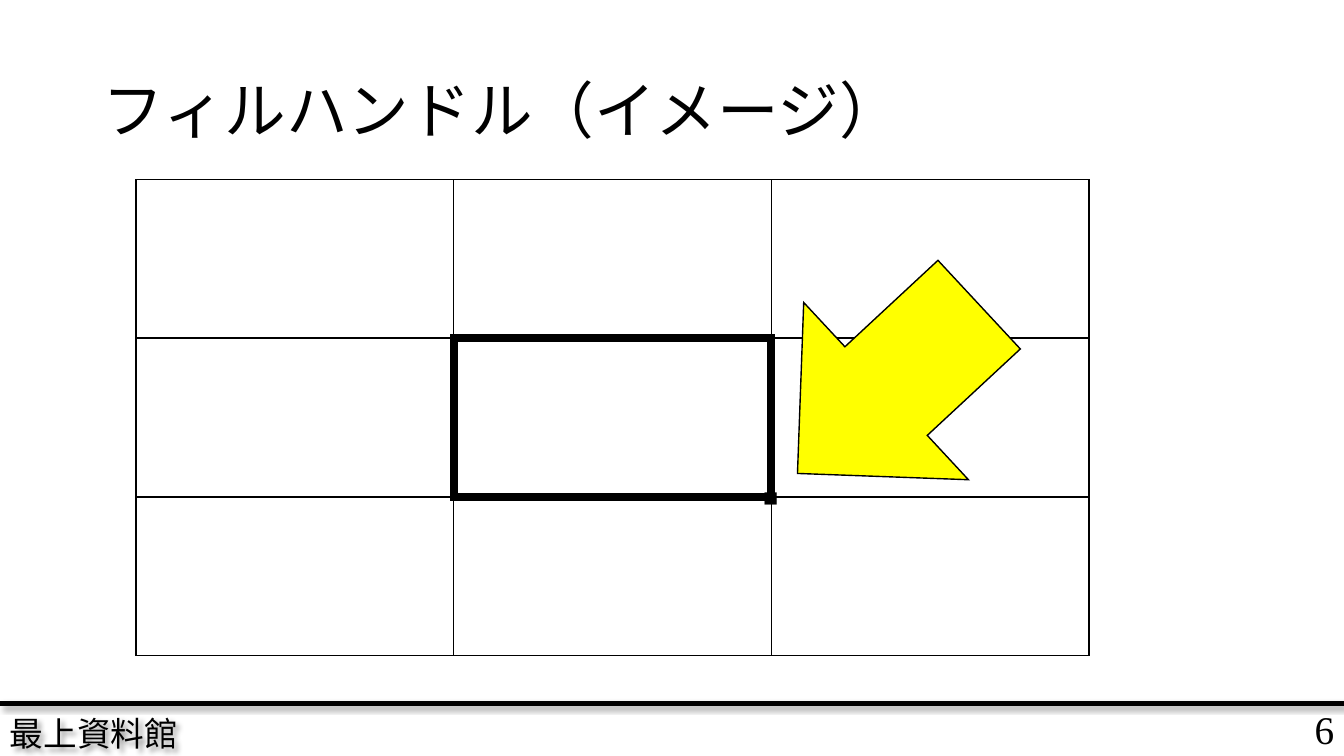
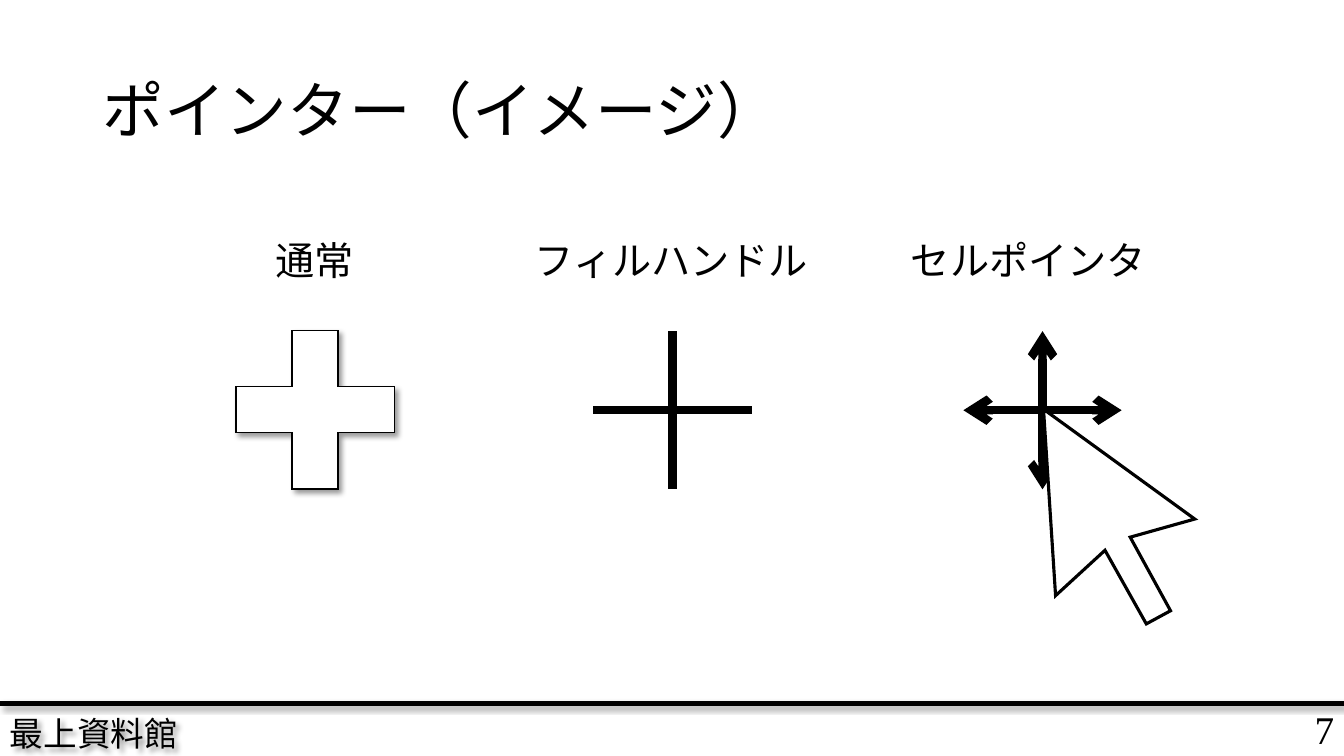
from dataclasses import dataclass

import lxml.etree
import pptx
import pptx.dml.color
import pptx.enum.shapes
import pptx.enum.text
import pptx.oxml.ns
import pptx.util

Inches = pptx.util.Inches
Pt = pptx.util.Pt
qn = pptx.oxml.ns.qn
SHAPE = pptx.enum.shapes.MSO_SHAPE
ALIGN = pptx.enum.text.PP_ALIGN
MIDDLE = pptx.enum.text.MSO_ANCHOR.MIDDLE

BLACK = pptx.dml.color.RGBColor(0x00, 0x00, 0x00)
WHITE = pptx.dml.color.RGBColor(0xFF, 0xFF, 0xFF)
YELLOW = pptx.dml.color.RGBColor(0xFF, 0xFF, 0x00)
SANS = "Noto Sans CJK JP"
SERIF = "Times New Roman"

SLIDE_W, SLIDE_H = 13.33, 7.5
FOOTER_Y = 6.98
GRID_X, GRID_Y = 1.35, 1.78
CELL_W, CELL_H = 3.15, 1.575
LABEL_X, LABEL_Y = 1.35, 2.18
LABEL_W, LABEL_H = 3.54, 0.79
CROSS_Y, CROSS_SIZE = 4.07, 1.57
CURSOR_POINTS = [
    (10.47, 5.91), (10.35, 4.06), (11.85, 5.15), (11.21, 5.33),
    (11.61, 6.06), (11.37, 6.19), (10.96, 5.46),
]


@dataclass(frozen=True)
class Box:
    x: float
    y: float
    w: float
    h: float

    def lengths(self) -> tuple:
        return Inches(self.x), Inches(self.y), Inches(self.w), Inches(self.h)


@dataclass(frozen=True)
class TextStyle:
    size: float
    font: str
    align: int = ALIGN.LEFT
    spacing: float = 1.0


TITLE = TextStyle(44, SANS, spacing=0.9)
LABEL = TextStyle(28, SANS, ALIGN.CENTER)
FOOTER = TextStyle(24, SERIF)
NUMBER = TextStyle(28, SERIF, ALIGN.RIGHT)
HANDLE = TextStyle(18, SERIF, ALIGN.CENTER)


def write(sp, text: str, style: TextStyle) -> None:
    tf = sp.text_frame
    tf.word_wrap = True
    tf.vertical_anchor = MIDDLE
    p = tf.paragraphs[0]
    p.text = text
    p.alignment = style.align
    p.line_spacing = style.spacing
    p.font.size = Pt(style.size)
    p.font.name = style.font
    p.font.color.rgb = BLACK
    props = p._p.pPr.find(qn("a:defRPr"))
    lxml.etree.SubElement(props, qn("a:ea"), typeface=SANS)


def add_text(s, box: Box, text: str, style: TextStyle):
    sp = s.shapes.add_textbox(*box.lengths())
    write(sp, text, style)
    return sp


def set_line(sp, color, width: float) -> None:
    sp.line.color.rgb = color
    sp.line.width = Pt(width)
    ln = sp._element.spPr.find(qn("a:ln"))
    lxml.etree.SubElement(ln, qn("a:miter"), lim="800000")


def paint(sp, fill, line=BLACK, width: float = 1) -> None:
    sp.shadow.inherit = False
    sp.fill.solid()
    sp.fill.fore_color.rgb = fill
    set_line(sp, line, width)


def add_shadow(sp) -> None:
    sp_pr = sp._element.spPr
    effects = sp_pr.find(qn("a:effectLst"))
    if effects is None:
        effects = lxml.etree.SubElement(sp_pr, qn("a:effectLst"))
    shadow = lxml.etree.SubElement(
        effects, qn("a:outerShdw"), blurRad=str(Pt(4)), dist=str(Pt(3)),
        dir="2700000", algn="tl", rotWithShape="0")
    color = lxml.etree.SubElement(shadow, qn("a:srgbClr"), val=str(BLACK))
    lxml.etree.SubElement(color, qn("a:alpha"), val="40000")


def add_shape(s, kind, box: Box, fill, line=BLACK, width: float = 1):
    sp = s.shapes.add_shape(kind, *box.lengths())
    paint(sp, fill, line, width)
    return sp


def add_line(s, x1: float, y1: float, x2: float, y2: float,
             width: float, arrows: bool = False):
    sp = s.shapes.add_connector(
        pptx.enum.shapes.MSO_CONNECTOR.STRAIGHT,
        Inches(x1), Inches(y1), Inches(x2), Inches(y2))
    set_line(sp, BLACK, width)
    if arrows:
        ln = sp._element.spPr.find(qn("a:ln"))
        for end in ("a:headEnd", "a:tailEnd"):
            lxml.etree.SubElement(ln, qn(end), type="arrow")
    lxml.etree.SubElement(sp._element.spPr, qn("a:effectLst"))
    return sp


def add_cross(s, center_x: float, arrows: bool = False) -> None:
    half = CROSS_SIZE / 2
    add_line(s, center_x, CROSS_Y - half, center_x, CROSS_Y + half, 6, arrows)
    add_line(s, center_x + half, CROSS_Y, center_x - half, CROSS_Y, 6, arrows)


def new_slide(prs, title: str, number: int):
    s = prs.slides.add_slide(prs.slide_layouts[6])
    s.background.fill.solid()
    s.background.fill.fore_color.rgb = WHITE
    add_text(s, Box(11.55, FOOTER_Y, 1.78, 0.51), str(number), NUMBER)
    add_shadow(add_text(s, Box(0, 7.05, 3.6, 0.45), "最上資料館", FOOTER))
    add_shadow(add_line(s, 0, FOOTER_Y, SLIDE_W, FOOTER_Y, 3))
    add_text(s, Box(0.92, 0.4, 11.5, 1.45), title, TITLE)
    return s


def cell_box(row: int, col: int) -> Box:
    return Box(GRID_X + col * CELL_W, GRID_Y + row * CELL_H, CELL_W, CELL_H)


def build_fill_handle(prs) -> None:
    s = new_slide(prs, "フィルハンドル（イメージ）", 6)
    for row in range(3):
        for col in range(3):
            if (row, col) != (1, 1):
                add_shape(s, SHAPE.RECTANGLE, cell_box(row, col), WHITE)
    add_shape(s, SHAPE.RECTANGLE, cell_box(1, 1), WHITE, width=6)
    add_text(s, Box(6.86, 4.14, 1.57, 1.57), "■", HANDLE)
    arrow = add_shape(s, SHAPE.RIGHT_ARROW, Box(7.58, 2.66, 2.46, 2.4), YELLOW)
    arrow.rotation = 137.1


def build_pointers(prs) -> None:
    s = new_slide(prs, "ポインター（イメージ）", 7)
    for i, text in enumerate(("通常", "フィルハンドル", "セルポインタ")):
        box = Box(LABEL_X + i * LABEL_W, LABEL_Y, LABEL_W, LABEL_H)
        write(add_shape(s, SHAPE.RECTANGLE, box, WHITE, WHITE), text, LABEL)

    plus = add_shape(s, SHAPE.CROSS, Box(2.34, 3.28, CROSS_SIZE, CROSS_SIZE), WHITE)
    plus.adjustments[0] = 0.355
    add_shadow(plus)
    add_cross(s, 6.67)
    add_cross(s, 10.34, arrows=True)

    points = [(Inches(x), Inches(y)) for x, y in CURSOR_POINTS]
    builder = s.shapes.build_freeform(*points[0])
    builder.add_line_segments(points[1:], close=True)
    paint(builder.convert_to_shape(), WHITE, width=2.25)


def main() -> None:
    prs = pptx.Presentation()
    prs.slide_width = Inches(SLIDE_W)
    prs.slide_height = Inches(SLIDE_H)
    build_fill_handle(prs)
    build_pointers(prs)
    prs.save("out.pptx")


if __name__ == "__main__":
    main()
